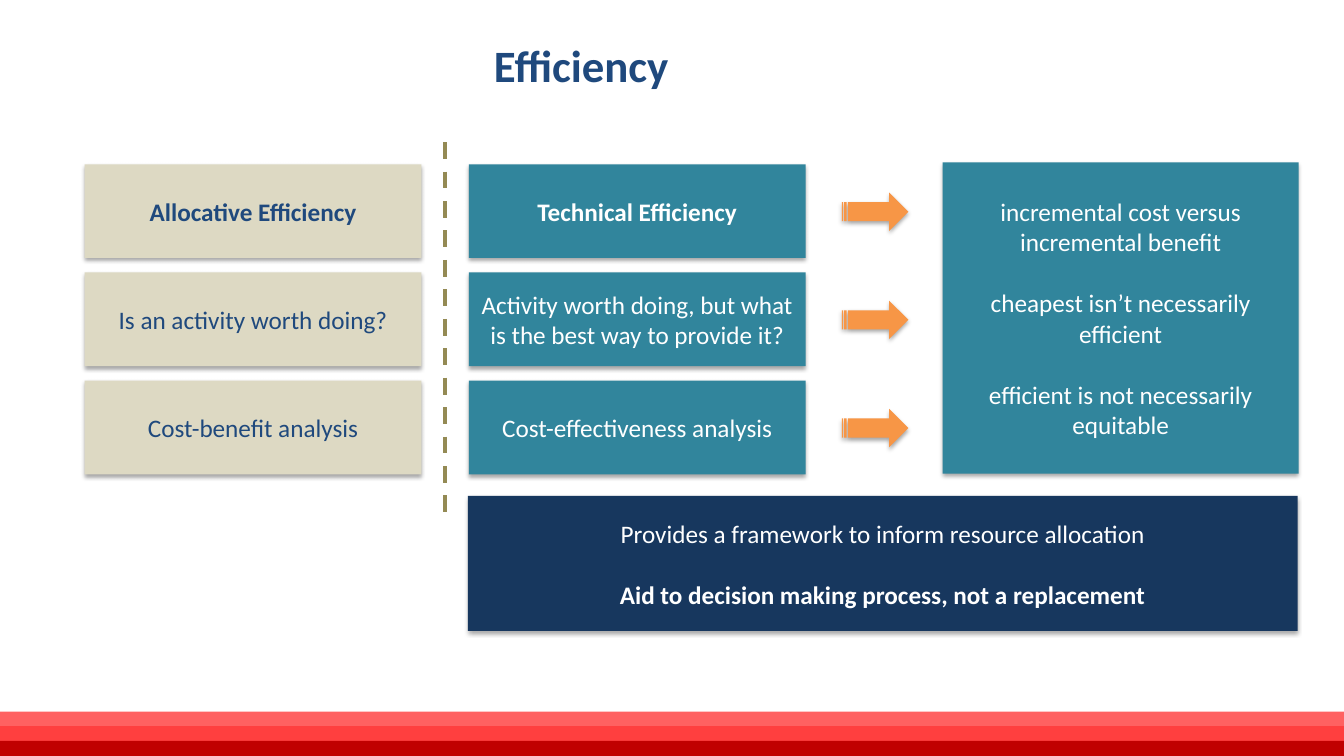
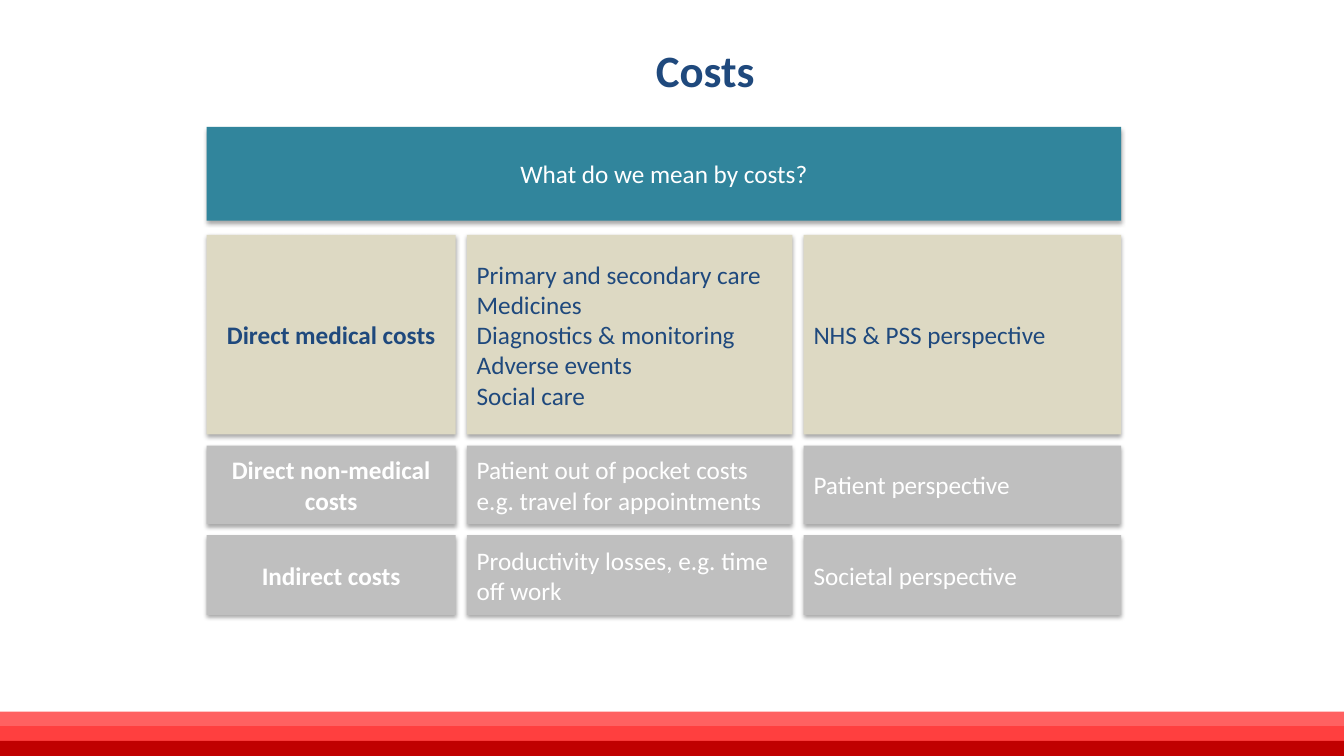
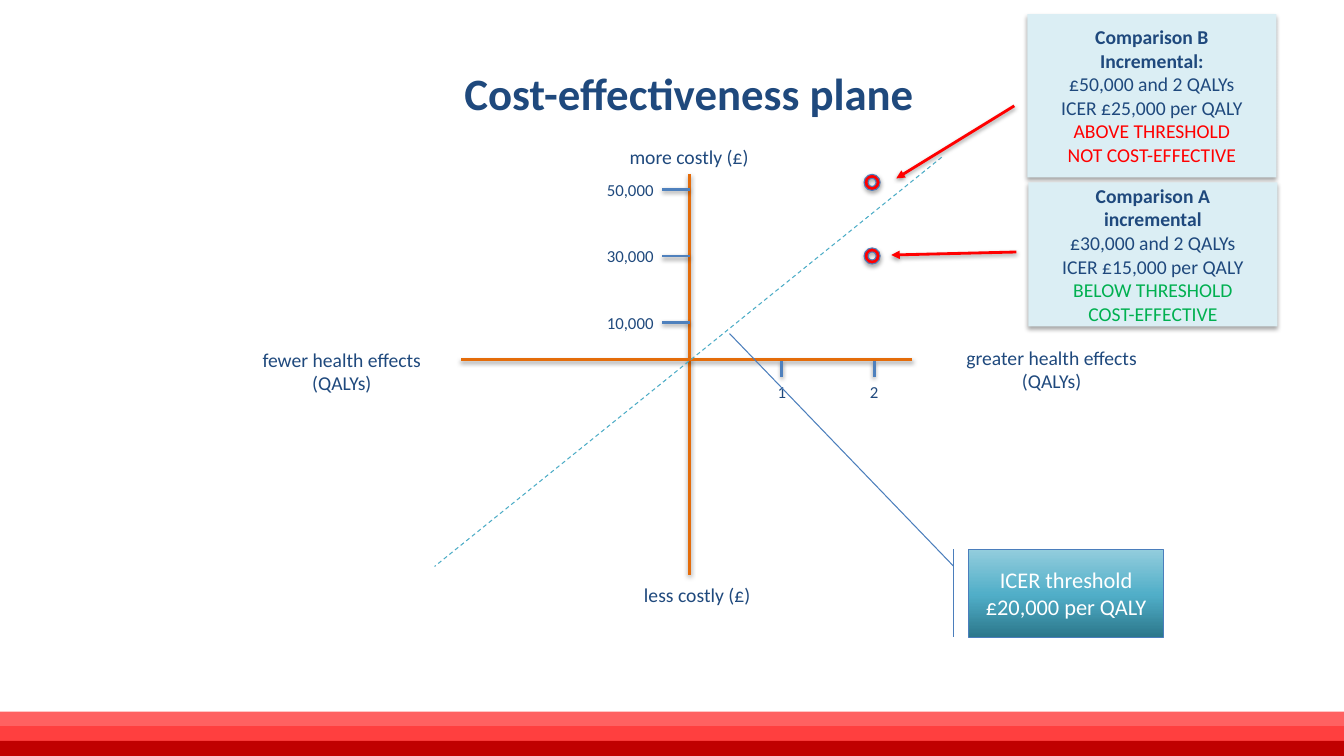
from copy import deepcopy

from lxml import etree
from pptx import Presentation
from pptx.dml.color import RGBColor
from pptx.enum.dml import MSO_LINE
from pptx.enum.shapes import MSO_CONNECTOR, MSO_SHAPE
from pptx.enum.text import MSO_ANCHOR, PP_ALIGN
from pptx.oxml.ns import qn
from pptx.util import Inches, Pt

RECT, DONUT = MSO_SHAPE.RECTANGLE, MSO_SHAPE.DONUT
ARROW = MSO_SHAPE.STRIPED_RIGHT_ARROW
CALLOUT = MSO_SHAPE.LINE_CALLOUT_1_BORDER_AND_ACCENT_BAR
STRAIGHT, DASH = MSO_CONNECTOR.STRAIGHT, MSO_LINE.DASH
LEFT, CENTER = PP_ALIGN.LEFT, PP_ALIGN.CENTER
TOP, MIDDLE = MSO_ANCHOR.TOP, MSO_ANCHOR.MIDDLE

FONT = "Calibri"
WIDTH, HEIGHT = 13.33, 7.5
WHITE, NAVY, DEEP_NAVY = "FFFFFF", "1F497D", "17375E"
TEAL, SAND, OLIVE, GREY = "31859C", "DDD9C3", "948A54", "BFBFBF"
ORANGE, AXIS, TICK, OUTLINE = "F79646", "E46C0A", "4F81BD", "4B7EBC"
PALE, AQUA, RED, GREEN = "DBEEF4", "4BACC6", "FF0000", "00B050"
BANDS = ("FF6161", "FF3F3F", "C00000")
CALLOUT_STOPS = ((0, "2C778B"), (0.48, "50AEC8"), (1, "93CDDD"))
BOLD = {"bold": True}


# Shared helpers
def rgb(value):
    return RGBColor.from_string(value)


def child(parent, tag, **attrs):
    return etree.SubElement(parent, qn(tag), attrs)


def set_effect(sp, shadow=True, alpha=35, dist=23000):
    effects = child(sp.element.spPr, "a:effectLst")
    if shadow:
        outer = child(effects, "a:outerShdw", blurRad="40000", dist=str(dist),
                      dir="5400000", rotWithShape="0")
        color = child(outer, "a:srgbClr", val="000000")
        child(color, "a:alpha", val=str(alpha * 1000))


def write(tf, lines, size=18, color=NAVY, align=CENTER, anchor=MIDDLE, gap=0):
    """Each line is a string, or a (string, font values) pair."""
    tf.word_wrap = True
    tf.vertical_anchor = anchor
    for i, line in enumerate(lines):
        text, values = (line, {}) if isinstance(line, str) else line
        p = tf.add_paragraph() if i else tf.paragraphs[0]
        p.alignment = align
        if i and gap:
            p.space_before = Pt(gap)
        r = p.add_run()
        r.text = text
        values = {"name": FONT, "size": Pt(size), "bold": False, "color": color} | values
        r.font.color.rgb = rgb(values.pop("color"))
        for name, value in values.items():
            setattr(r.font, name, value)


def add_box(slide, box, fill, lines=(), kind=RECT, outline=None, shadow=True, **style):
    sp = slide.shapes.add_shape(kind, *map(Inches, box))
    sp.fill.solid()
    sp.fill.fore_color.rgb = rgb(fill)
    if outline:
        sp.line.color.rgb = rgb(outline)
        sp.line.width = Pt(0.75)
    else:
        sp.line.fill.background()
    set_effect(sp, shadow)
    write(sp.text_frame, lines, **style)
    return sp


def add_label(slide, box, text, size=14, align=CENTER):
    sp = slide.shapes.add_textbox(*map(Inches, box))
    write(sp.text_frame, [text], size, align=align, anchor=TOP)


def add_line(slide, start, end, color, width=2, dash=None, arrow=False, shadow=True):
    cx = slide.shapes.add_connector(STRAIGHT, *map(Inches, (*start, *end)))
    cx.line.color.rgb = rgb(color)
    cx.line.width = Pt(width)
    if dash:
        cx.line.dash_style = dash
    if arrow:
        child(cx.line._get_or_add_ln(), "a:tailEnd", type="triangle")
    set_effect(cx, shadow, alpha=38, dist=20000)


def add_slide(prs, title, left, top):
    slide = prs.slides.add_slide(prs.slide_layouts[5])
    sp = slide.shapes.title
    sp.left, sp.top, sp.width, sp.height = map(Inches, (left, top, 11.67, 0.83))
    write(sp.text_frame, [(title, BOLD)], 32, anchor=TOP)
    return slide


def move_bands_to_master(prs, slide):
    for i, color in enumerate(BANDS):
        sp = add_box(slide, (0, 7.06 + 0.145 * i, WIDTH, 0.16), color, shadow=False)
        sp.element.nvSpPr.cNvPr.set("id", str(20 + i))
        prs.slide_master.shapes.element.append(sp.element)


# Slide 1: two kinds of efficiency
def efficiency_column(slide, box, lines, fill, color):
    x, y, w, h = box
    pitch = h / 3
    for i, line in enumerate(lines):
        text = (line, BOLD) if i == 0 else line
        add_box(slide, (x, y + i * pitch, w, 0.93), fill, [text], color=color)


def arrow_column(slide, box):
    x, y, w, h = box
    for i in range(3):
        add_box(slide, (x, y + 0.28 + i * h / 3, w, 0.38), ORANGE, kind=ARROW)


def efficiency_slide(prs):
    slide = add_slide(prs, "Efficiency", -0.07, 0.32)
    move_bands_to_master(prs, slide)
    top, height = 1.63, 3.22
    add_line(slide, (4.41, 1.41), (4.41, 5.18), OLIVE, 3, DASH, shadow=False)
    efficiency_column(slide, (0.84, top, 3.34, height),
                      ["Allocative Efficiency", "Is an activity worth doing?",
                       "Cost-benefit analysis"], SAND, NAVY)
    efficiency_column(slide, (4.65, top, 3.34, height),
                      ["Technical Efficiency",
                       "Activity worth doing, but what is the best way to provide it?",
                       "Cost-effectiveness analysis"], TEAL, WHITE)
    arrow_column(slide, (8.35, top, 0.66, height))
    add_box(slide, (9.35, 1.61, 3.53, 3.09), TEAL,
            ["incremental cost versus incremental benefit",
             "cheapest isn’t necessarily efficient",
             "efficient is not necessarily equitable"], color=WHITE, gap=22)
    add_box(slide, (4.64, 4.92, 8.23, 1.34), DEEP_NAVY,
            ["Provides a framework to inform resource allocation",
             ("Aid to decision making process, not a replacement", BOLD)],
            color=WHITE, gap=22)


# Slide 2: grid of cost types
def cost_grid(slide, box, rows):
    x, y, w, _ = box
    gap = 0.11
    widths = (2.47, 3.23, w - 2.47 - 3.23 - 2 * gap)
    for height, fill, color, cells in rows:
        left = x
        for i, (width, lines) in enumerate(zip(widths, cells)):
            if i == 0:
                lines = [(line, BOLD) for line in lines]
            add_box(slide, (left, y, width, height), fill, lines,
                    color=color, align=LEFT if i else CENTER)
            left += width + gap
        y += height + gap


def costs_slide(prs):
    slide = add_slide(prs, "Costs", 1.16, 0.37)
    cost_grid(slide, (2.05, 2.33, 9.07, 3.77), [
        (1.98, SAND, NAVY, (
            ["Direct medical costs"],
            ["Primary and secondary care", "Medicines", "Diagnostics & monitoring",
             "Adverse events", "Social care"],
            ["NHS & PSS perspective"])),
        (0.78, GREY, WHITE, (
            ["Direct non-medical costs"],
            ["Patient out of pocket costs e.g. travel for appointments"],
            ["Patient perspective"])),
        (0.79, GREY, WHITE, (
            ["Indirect costs"],
            ["Productivity losses, e.g. time off work"],
            ["Societal perspective"])),
    ])
    add_box(slide, (2.05, 1.26, 9.07, 0.93), TEAL, ["What do we mean by costs?"],
            color=WHITE)


# Slide 3: cost-effectiveness plane
def plane(slide, box):
    x, y, w, h = box
    ox, oy = x + 2.27, y + 1.84
    # Axes and their names
    add_line(slide, (ox, y), (ox, y + h), AXIS)
    add_line(slide, (x + w, oy), (x, oy), AXIS)
    for dx, dy, width, height, text in (
            (-0.76, -2.18, 1.51, 0.34, "more costly (£)"),
            (-0.68, 2.16, 1.51, 0.34, "less costly (£)"),
            (-4.55, -0.17, 2.2, 0.57, "fewer health effects (QALYs)"),
            (2.48, -0.19, 2.22, 0.57, "greater health effects (QALYs)")):
        add_label(slide, (ox + dx, oy + dy, width, height), text)
    # Threshold line
    add_line(slide, (ox + 2.5, oy - 2.01), (ox - 2.53, oy + 2.05), AQUA, 0.75, DASH,
             shadow=False)
    # Ticks
    for i in (1, 2):
        tx = ox + 0.915 * i
        add_line(slide, (tx, oy + 0.01), (tx, oy + 0.17), TICK)
        add_label(slide, (tx - 0.14, oy + 0.17, 0.68, 0.3), str(i), 12, LEFT)
    for i, text in enumerate(("10,000", "30,000", "50,000")):
        ty = oy - 0.37 - 0.66 * i
        add_line(slide, (ox, ty), (ox - 0.27, ty), TICK)
        add_label(slide, (ox - 0.92, ty - 0.15, 0.68, 0.3), text, 12, LEFT)


def comparison(slide, box, heading, facts, verdict, color, point, start, end):
    lines = [(line, BOLD) for line in heading] + facts
    lines += [(line, {"color": color}) for line in verdict]
    add_box(slide, box, PALE, lines, size=14)
    add_box(slide, (*point, 0.16, 0.16), RED, kind=DONUT, outline=OUTLINE)
    add_line(slide, start, end, RED, arrow=True)


def threshold_callout(slide, box):
    sp = add_box(slide, box, AQUA, ["ICER threshold £20,000 per QALY"], CALLOUT,
                 OUTLINE, False, size=16, color=WHITE)
    for i, value in enumerate((0.19, -0.08, -2.46, -1.23)):
        sp.adjustments[i] = value
    sp.fill.gradient()
    sp.fill.gradient_angle = 90
    stops = sp.element.spPr.find(".//" + qn("a:gsLst"))
    stops.insert(1, deepcopy(stops[0]))
    for stop, (position, color) in zip(sp.fill.gradient_stops, CALLOUT_STOPS):
        stop.position = position
        stop.color.rgb = rgb(color)


def plane_slide(prs):
    slide = add_slide(prs, "Cost-effectiveness plane", 1, 0.6)
    plane(slide, (4.57, 1.73, 4.48, 3.97))
    threshold_callout(slide, (9.61, 5.45, 1.93, 0.87))
    comparison(slide, (10.19, 0.14, 2.47, 1.62), ["Comparison B", "Incremental:"],
               ["£50,000 and 2 QALYs", "ICER £25,000 per QALY"],
               ["ABOVE THRESHOLD", "NOT COST-EFFECTIVE"], RED,
               (8.57, 1.73), (10.06, 1.05), (8.89, 1.77))
    comparison(slide, (10.2, 1.81, 2.47, 1.43), ["Comparison A", "incremental"],
               ["£30,000 and 2 QALYs", "ICER £15,000 per QALY"],
               ["BELOW THRESHOLD", "COST-EFFECTIVE"], GREEN,
               (8.57, 2.46), (10.08, 2.5), (8.84, 2.53))


def main():
    prs = Presentation()
    prs.slide_width, prs.slide_height = Inches(WIDTH), Inches(HEIGHT)
    efficiency_slide(prs)
    costs_slide(prs)
    plane_slide(prs)
    prs.save("out.pptx")


if __name__ == "__main__":
    main()
